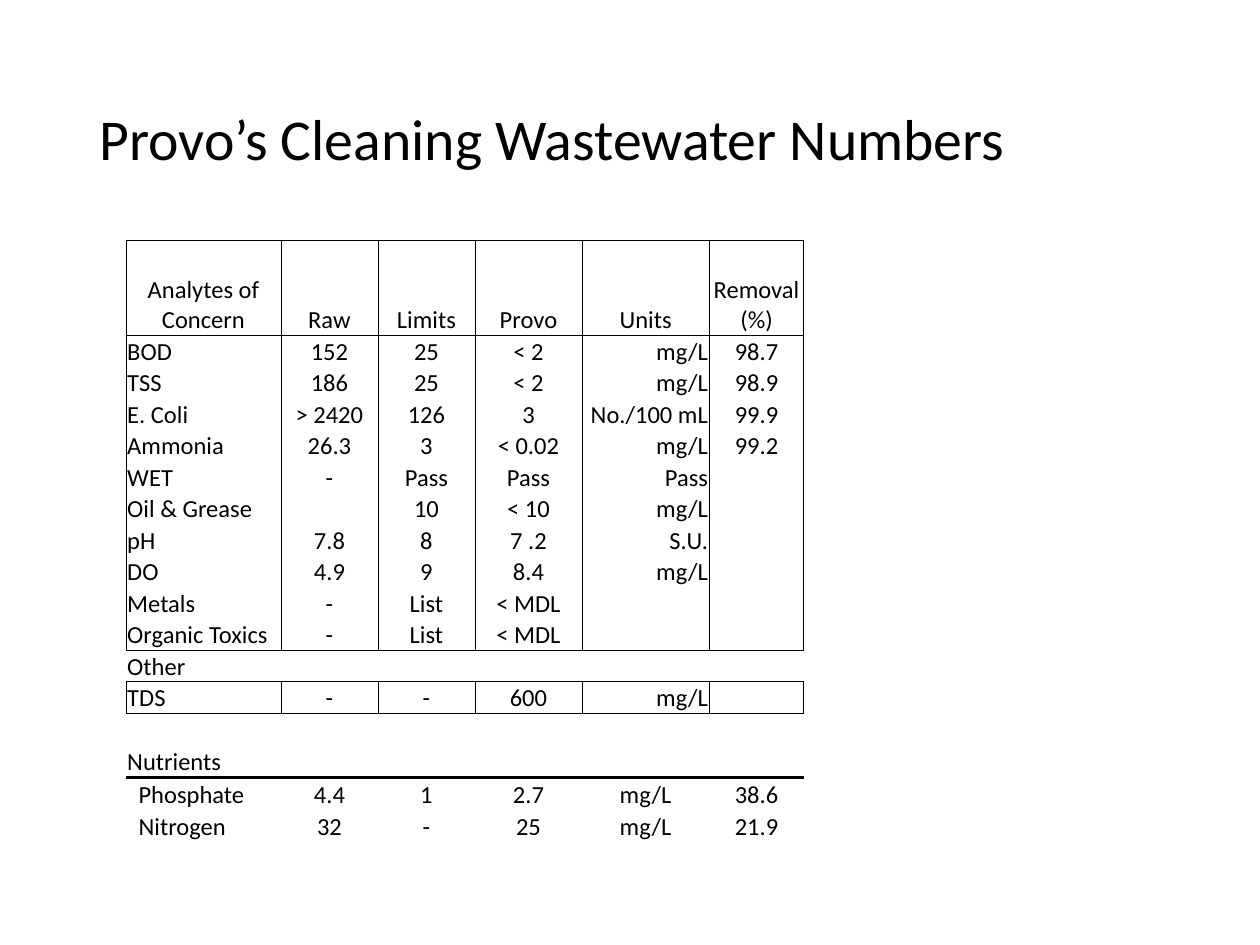
from lxml import etree
from pptx import Presentation
from pptx.dml.color import RGBColor
from pptx.enum import text
from pptx.oxml.ns import qn
from pptx.util import Inches, Pt

# Content: cells of each row, then its border widths by side
title = "Provo’s Cleaning Wastewater Numbers"
thin, thick = 0.5, 2
box = dict.fromkeys("LRTB", thin)
side = dict.fromkeys("LR", thin)
rows = [
    (("Analytes of Concern", "Raw", "Limits", "Provo", "Units", "Removal (%)"), box),
    (("BOD", "152", "25", "< 2", "mg/L", "98.7"), side | {"T": thin}),
    (("TSS", "186", "25", "< 2", "mg/L", "98.9"), side),
    (("E. Coli", "> 2420", "126", "3", "No./100 mL", "99.9"), side),
    (("Ammonia", "26.3", "3", "< 0.02", "mg/L", "99.2"), side),
    (("WET", "-", "Pass", "Pass", "Pass", ""), side),
    (("Oil & Grease", "", "10", "< 10", "mg/L", ""), side),
    (("pH", "7.8", "8", "7 .2", "S.U.", ""), side),
    (("DO", "4.9", "9", "8.4", "mg/L", ""), side),
    (("Metals", "-", "List", "< MDL", "", ""), side),
    (("Organic Toxics", "-", "List", "< MDL", "", ""), side | {"B": thin}),
    (("Other", "", "", "", "", ""), {"T": thin, "B": thin}),
    (("TDS", "-", "-", "600", "mg/L", ""), box),
    (("", "", "", "", "", ""), {"T": thin}),
    (("Nutrients", "", "", "", "", ""), {"B": thick}),
    (("Phosphate", "4.4", "1", "2.7", "mg/L", "38.6"), {"T": thick}),
    (("Nitrogen", "32", "-", "25", "mg/L", "21.9"), {}),
]
wide = [1.23, 0.77, 0.77, 0.85, 1.01, 0.75]
high = [0.75] + [0.25] * 13 + [0.26] * 2 + [0.25]
subs = len(rows) - 2  # first indented row

# Formats
colors = {"ink": "000000", "page": "FFFFFF"}
ink = RGBColor.from_string(colors["ink"])
font = {"name": "Calibri", "size": Pt(14)}
pads = {"margin_left": Inches(0.01), "margin_right": Inches(0.01),
        "margin_top": Inches(0.01), "margin_bottom": 0,
        "vertical_anchor": text.MSO_ANCHOR.BOTTOM}
left, mid, right = text.PP_ALIGN.LEFT, text.PP_ALIGN.CENTER, text.PP_ALIGN.RIGHT


def apply(item, values):
    for key, value in values.items():
        setattr(item, key, value)


def write(para, words, style):
    run = para.add_run()
    run.text = words
    apply(run.font, style)
    run.font.color.rgb = ink


def edge(cell, lines):
    props = cell._tc.get_or_add_tcPr()
    for name in "LRTB":
        line = etree.SubElement(props, qn(f"a:ln{name}"))
        if name in lines:
            line.set("w", str(Pt(lines[name])))
            fill = etree.SubElement(line, qn("a:solidFill"))
            etree.SubElement(fill, qn("a:srgbClr"), val=colors["ink"])
        else:
            line.set("w", "0")
            etree.SubElement(line, qn("a:noFill"))


def align(row, col):
    if row and col == 0:
        return left
    return right if col == 4 and 0 < row < subs else mid


deck = Presentation()
deck.slide_width, deck.slide_height = Inches(10), Inches(7.5)
slide = deck.slides.add_slide(deck.slide_layouts[6])
slide.background.fill.solid()
slide.background.fill.fore_color.rgb = RGBColor.from_string(colors["page"])

# Title
frame = slide.shapes.add_textbox(
    Inches(0.69), Inches(0.4), Inches(8.62), Inches(1.45)).text_frame
apply(frame, {"word_wrap": True, "vertical_anchor": text.MSO_ANCHOR.MIDDLE})
frame.paragraphs[0].line_spacing = 0.9
write(frame.paragraphs[0], title, font | {"size": Pt(33)})

# Table
table = slide.shapes.add_table(
    len(rows), len(wide), Inches(1), Inches(1.91),
    Inches(sum(wide)), Inches(sum(high))).table
apply(table, {"first_row": False, "horz_banding": False})
for col, size in zip(table.columns, wide):
    col.width = Inches(size)
for row, size in zip(table.rows, high):
    row.height = Inches(size)

for r, (words, lines) in enumerate(rows):
    for c, word in enumerate(words):
        cell = table.cell(r, c)
        apply(cell, pads)
        if r >= subs and c == 0:
            cell.margin_left = Inches(0.1)
        edge(cell, lines)
        cell.fill.background()
        para = cell.text_frame.paragraphs[0]
        para.alignment = align(r, c)
        if word:
            write(para, word, font)
        else:  # keeps the empty row from growing
            etree.SubElement(para._p, qn("a:endParaRPr"), sz="1400")

deck.save("out.pptx")
